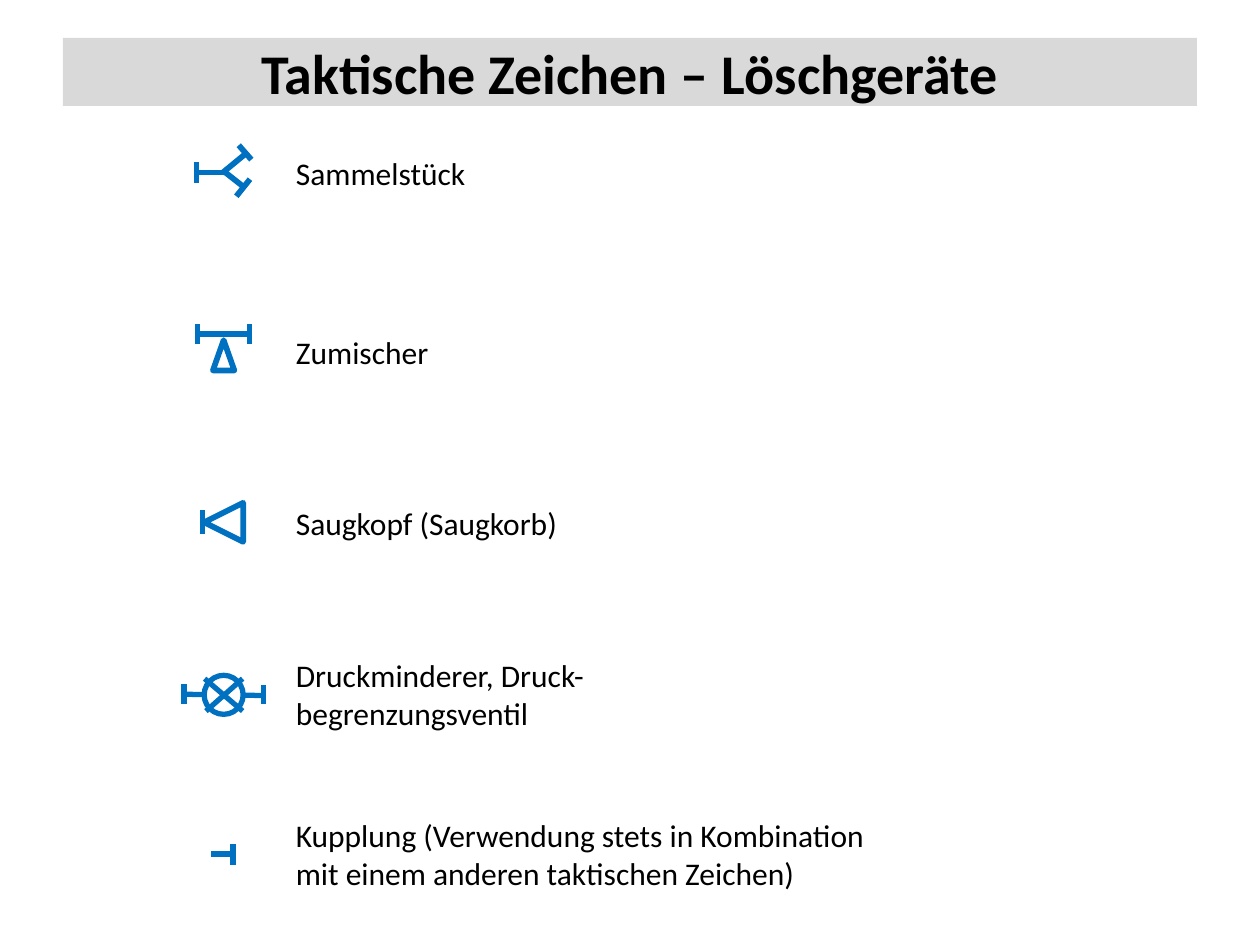
from lxml.etree import SubElement
from pptx import Presentation
from pptx.dml.color import RGBColor
from pptx.enum.shapes import MSO_CONNECTOR as Link, MSO_SHAPE as Form
from pptx.enum.text import MSO_ANCHOR as Anchor, MSO_AUTO_SIZE as Fit, PP_ALIGN as Align
from pptx.oxml.ns import qn
from pptx.util import Inches, Pt


def tint(color, code):
    color.rgb = RGBColor.from_string(code)


class Board:
    """Holds the style and the current slide and draws each kind of element."""

    font, ink, blue, white, grey = "Calibri", "000000", "0070C0", "FFFFFF", "D9D9D9"

    def __init__(self, slide):
        self.slide = slide
        self.group = None

    def words(self, para, text, size, bold=False):
        for i, part in enumerate(text.split("\n")):
            if i:
                para.add_line_break()
            run = para.add_run()
            run.text = part
            run.font.name, run.font.size, run.font.bold = self.font, Pt(size), bold
            tint(run.font.color, self.ink)

    def title(self, text, *box):
        bar = self.slide.shapes.add_shape(Form.RECTANGLE, *map(Inches, box))
        bar.shadow.inherit = False
        bar.fill.solid()
        tint(bar.fill.fore_color, self.grey)
        bar.line.fill.background()
        frame = bar.text_frame
        frame.word_wrap, frame.vertical_anchor = True, Anchor.MIDDLE
        frame.paragraphs[0].alignment = Align.CENTER
        self.words(frame.paragraphs[0], text, 32, True)

    def label(self, text, *box):
        frame = self.slide.shapes.add_textbox(*map(Inches, box)).text_frame
        frame.word_wrap, frame.auto_size = False, Fit.SHAPE_TO_FIT_TEXT
        self.words(frame.paragraphs[0], text, 18)

    def symbol(self):
        self.group = self.slide.shapes.add_group_shape()

    def stroke(self, line, width):
        line.width = Pt(width)
        line.fill.solid()
        tint(line.color, self.blue)

    def lines(self, width, *ends):
        for end in ends:
            link = self.group.shapes.add_connector(Link.STRAIGHT, *map(Inches, end))
            self.stroke(link.line, width)
            props = link._element.spPr
            props.find(qn("a:ln")).set("cap", "sq")
            SubElement(props, qn("a:effectLst"))

    def form(self, kind, width, *box, turn=0):
        shape = self.group.shapes.add_shape(kind, *map(Inches, box))
        shape.shadow.inherit = False
        shape.rotation = turn
        shape.fill.solid()
        tint(shape.fill.fore_color, self.white)
        self.stroke(shape.line, width)
        SubElement(shape._element.spPr.find(qn("a:ln")), qn("a:round"))


def main():
    deck = Presentation()
    deck.slide_width, deck.slide_height = Inches(10), Inches(7.5)
    board = Board(deck.slides.add_slide(deck.slide_layouts[6]))

    board.title("Taktische Zeichen – Löschgeräte", 0.5, 0.3, 9, 0.54)
    for text, top, width, height in (
        ("Sammelstück", 1.17, 1.56, 0.4),
        ("Zumischer", 2.59, 1.26, 0.4),
        ("Saugkopf (Saugkorb)", 3.95, 2.3, 0.4),
        ("Druckminderer, Druck-\nbegrenzungsventil", 5.16, 2.52, 0.71),
        ("Kupplung (Verwendung stets in Kombination\n"
         "mit einem anderen taktischen Zeichen)", 6.43, 4.77, 0.71),
    ):
        board.label(text, 2.25, top, width, height)

    board.symbol()
    board.lines(3.25, (1.77, 1.37, 1.56, 1.37), (1.56, 1.43, 1.56, 1.31),
                (1.93, 1.48, 1.79, 1.37), (1.91, 1.17, 1.98, 1.25),
                (1.89, 1.54, 1.97, 1.44), (1.78, 1.36, 1.95, 1.22))

    board.symbol()
    board.lines(3, (1.96, 2.65, 1.57, 2.65), (1.98, 2.71, 1.98, 2.59),
                (1.57, 2.71, 1.57, 2.59))
    board.form(Form.ISOSCELES_TRIANGLE, 3.25, 1.69, 2.7, 0.17, 0.24)

    board.symbol()
    board.lines(3, (1.61, 4.22, 1.61, 4.07))
    board.form(Form.ISOSCELES_TRIANGLE, 3.25, 1.62, 3.99, 0.31, 0.31, turn=270)

    board.symbol()
    board.lines(3, (2.07, 5.52, 1.46, 5.51), (2.09, 5.57, 2.09, 5.46))
    board.form(Form.OVAL, 3, 1.62, 5.36, 0.31, 0.31)
    board.lines(3, (1.46, 5.57, 1.46, 5.45), (1.65, 5.63, 1.91, 5.4),
                (1.64, 5.4, 1.91, 5.63))

    board.symbol()
    board.lines(3.25, (1.82, 6.78, 1.7, 6.78), (1.85, 6.84, 1.85, 6.72))

    deck.save("out.pptx")


if __name__ == "__main__":
    main()
